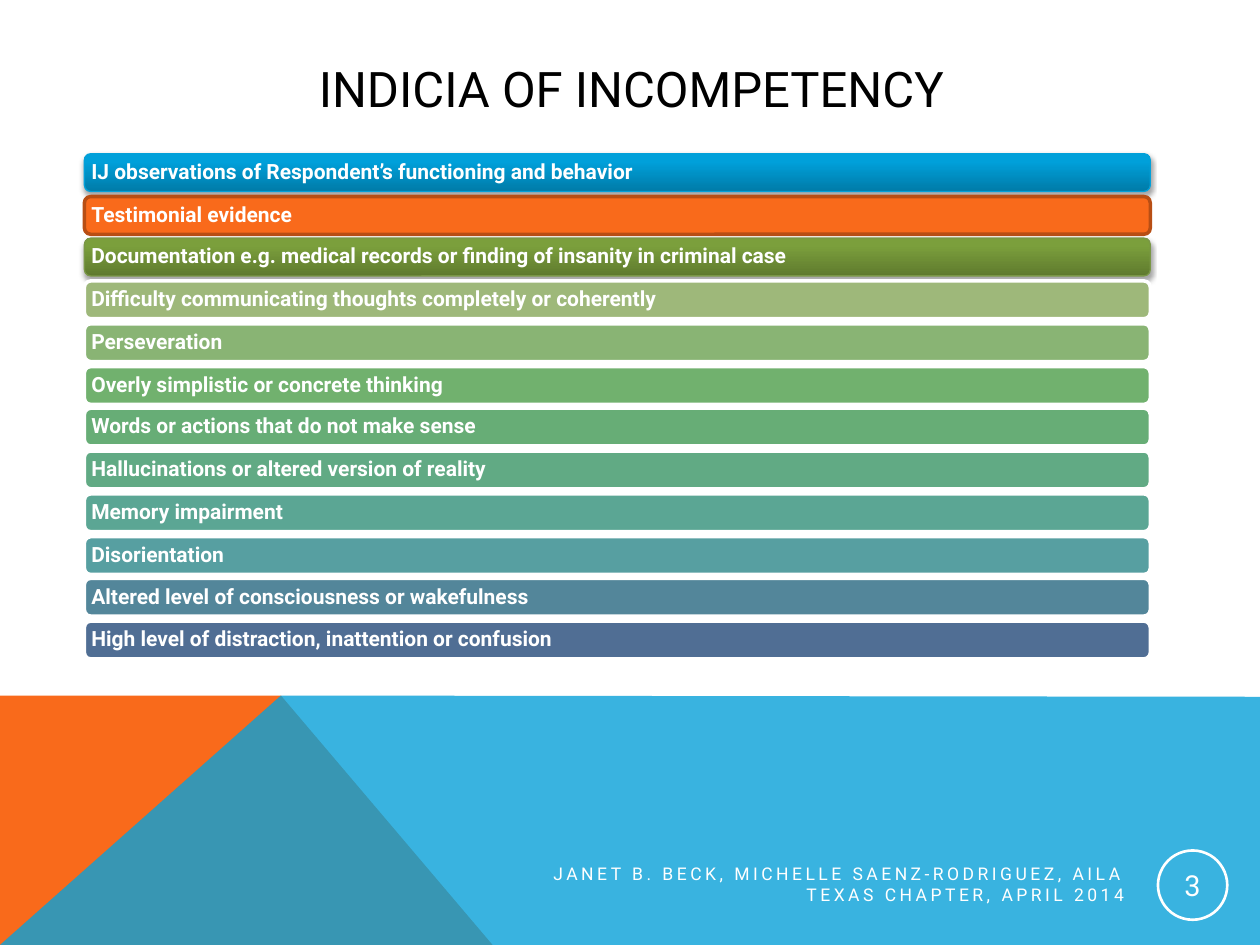
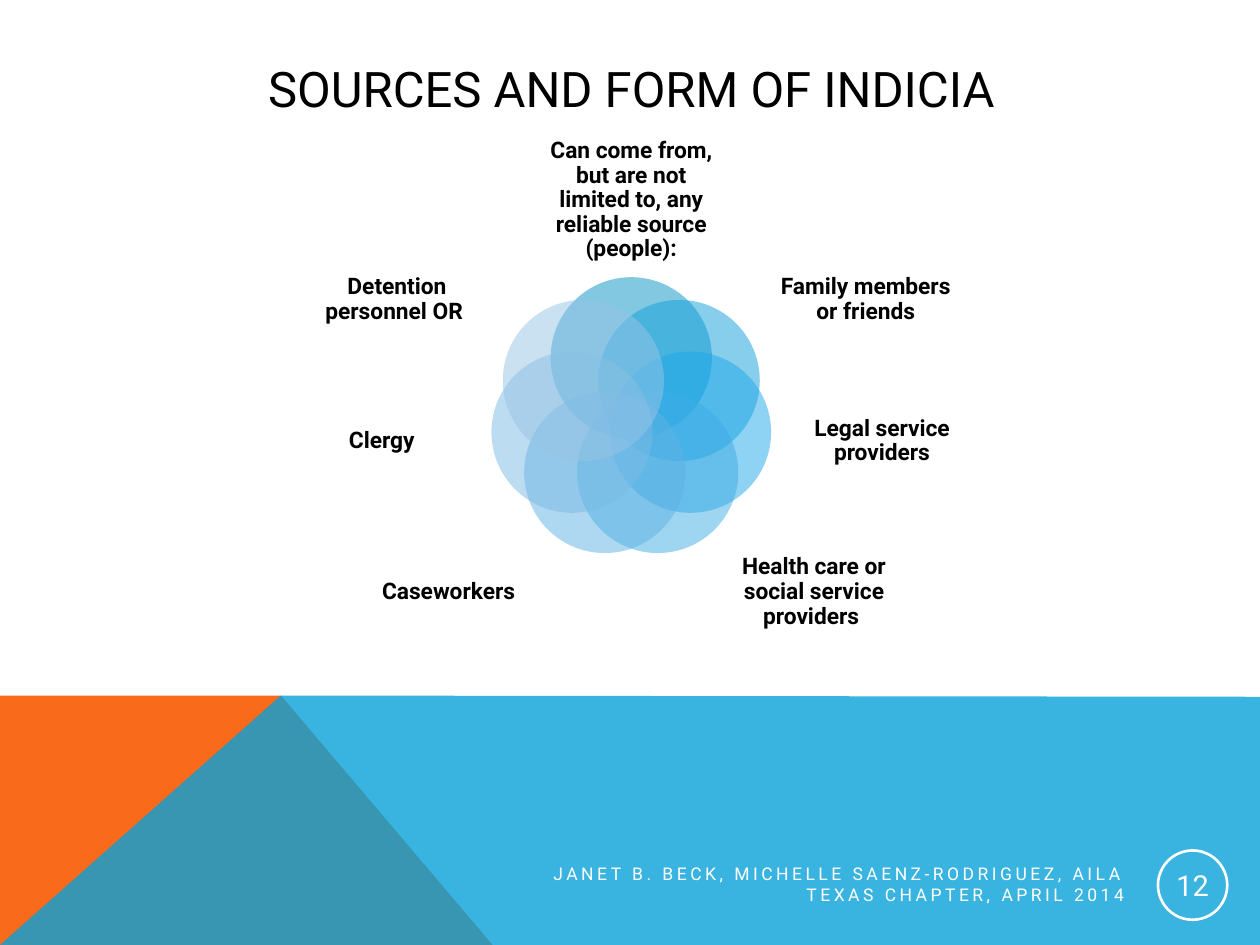
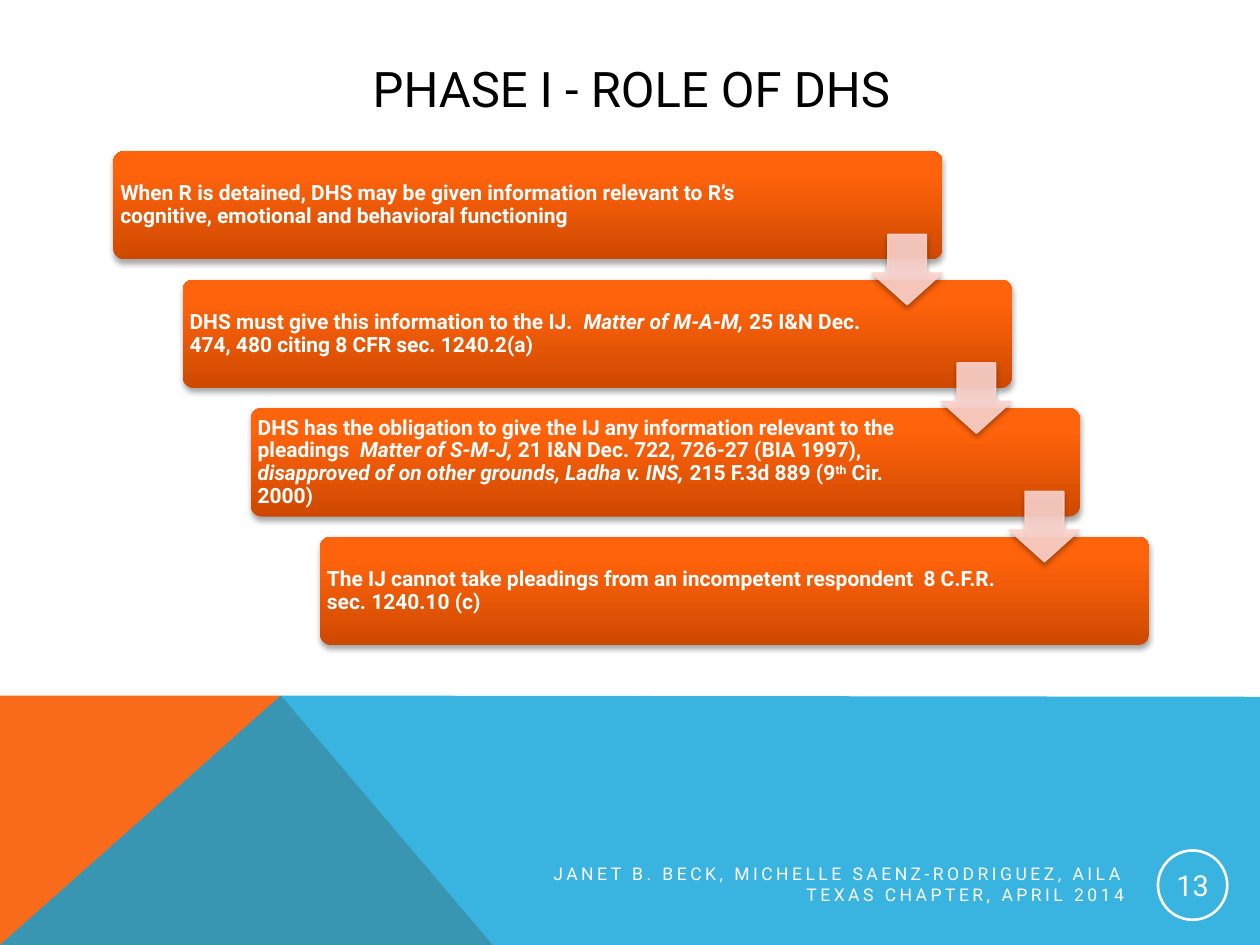
import math
from dataclasses import dataclass
from typing import NamedTuple

import lxml.etree
import pptx
import pptx.dml.color
import pptx.enum.shapes
import pptx.enum.text
import pptx.oxml.ns
import pptx.util

PX = 9144  # EMU per px, 100 px to the inch
FONT = "Roboto"
FOOTER = "JANET B. BECK, MICHELLE SAENZ-RODRIGUEZ, AILA TEXAS CHAPTER, APRIL 2014"

COLORS = {
    "text": "000000",
    "white": "FFFFFF",
    "orange": "F96A1B",
    "orange_edge": "B84E14",
    "band_blue": "08A1D9",
    "blue_edge": "03A0D9",
    "green_edge": "7A9746",
    "arrow": "FDD4CD",
}
# Gradient stops at 0, 80 and 100 percent, from bottom to top
GRADIENTS = {
    "blue": ("007BA8", "00A0DA", "00A0DB"),
    "green": ("5F7A2E", "7B9F3C", "7CA13B"),
    "orange": ("CE4900", "FF630C", "FF640E"),
}

SHAPE = pptx.enum.shapes.MSO_SHAPE
ALIGN = pptx.enum.text.PP_ALIGN
MIDDLE = pptx.enum.text.MSO_ANCHOR.MIDDLE
qn = pptx.oxml.ns.qn


class Box(NamedTuple):
    x: int
    y: int
    w: int
    h: int


class Run(NamedTuple):
    text: str
    italic: bool = False
    superscript: bool = False


class Label(NamedTuple):
    text: str
    box: Box
    circle_color: str


@dataclass(frozen=True)
class Style:
    fill: str | tuple[str, str, str] | None
    line: str | None = None
    line_pt: float = 0.75
    alpha: int = 100
    shadow: bool = False


@dataclass(frozen=True)
class TextStyle:
    size: float
    color: str = COLORS["white"]
    bold: bool = False
    align: ALIGN = ALIGN.LEFT
    line_spacing: float | None = None
    tracking_pt: int = 0


TITLE = TextStyle(28, COLORS["text"], align=ALIGN.CENTER)
PAGE_NUMBER = TextStyle(16.5, align=ALIGN.CENTER)
CREDIT = TextStyle(10, align=ALIGN.RIGHT, tracking_pt=2)
BAR_TEXT = TextStyle(12, bold=True, line_spacing=0.9)
LABEL_TEXT = TextStyle(13, COLORS["text"], True, ALIGN.CENTER, 0.9)


def plain_bar(color: str) -> Style:
    return Style(color, COLORS["white"], 2)


INDICIA = [
    ("IJ observations of Respondent’s functioning and behavior",
     Style(GRADIENTS["blue"], COLORS["blue_edge"], shadow=True)),
    ("Testimonial evidence", Style(COLORS["orange"], COLORS["orange_edge"], 2)),
    ("Documentation e.g. medical records or finding of insanity in criminal case",
     Style(GRADIENTS["green"], COLORS["green_edge"], shadow=True)),
    ("Difficulty communicating thoughts completely or coherently", plain_bar("9EB87A")),
    ("Perseveration", plain_bar("89B474")),
    ("Overly simplistic or concrete thinking", plain_bar("71B16E")),
    ("Words or actions that do not make sense", plain_bar("67AD76")),
    ("Hallucinations or altered version of reality", plain_bar("61AA84")),
    ("Memory impairment", plain_bar("5BA694")),
    ("Disorientation", plain_bar("579FA1")),
    ("Altered level of consciousness or wakefulness", plain_bar("53869A")),
    ("High level of distraction, inattention or confusion", plain_bar("506E94")),
]

# Clockwise from the top
SOURCES = [
    Label("Can come from, but are not limited to, any reliable source (people):",
          Box(428, 120, 146, 78), "0792C5"),
    Label("Family members or friends", Box(618, 195, 138, 86), "0F9FDB"),
    Label("Legal service providers", Box(632, 304, 136, 92), "1EA8E9"),
    Label("Health care or social service providers ", Box(573, 428, 146, 84), "3FACE5"),
    Label("Caseworkers", Box(283, 428, 146, 84), "5EB2E4"),
    Label("Clergy", Box(235, 304, 136, 92), "7BBAE4"),
    Label("Detention personnel OR ", Box(246, 195, 138, 86), "97C4E5"),
]

DHS_STEPS = [
    [Run("When R is detained, DHS may be given information relevant to R’s "
         "cognitive, emotional and behavioral functioning")],
    [Run("DHS must give this information to the IJ.  "),
     Run("Matter of M-A-M, ", italic=True),
     Run("25 I&N Dec. 474, 480 citing 8 CFR sec. 1240.2(a)")],
    [Run("DHS has the obligation to give the IJ any information relevant to the pleadings  "),
     Run("Matter of S-M-J, ", italic=True),
     Run("21 I&N Dec. 722, 726-27 (BIA 1997), "),
     Run("disapproved of on other grounds, Ladha v. INS, ", italic=True),
     Run("215 F.3d 889 (9"),
     Run("th", superscript=True),
     Run(" Cir. 2000)")],
    [Run("The IJ cannot take pleadings from an incompetent respondent  8 C.F.R.  "
         "sec. 1240.10 (c)")],
]


def rgb(color: str) -> pptx.dml.color.RGBColor:
    return pptx.dml.color.RGBColor.from_string(color)


def emu(box: Box) -> list[int]:
    return [v * PX for v in box]


def add_color(parent, color: str, alpha: int = 100) -> None:
    clr = lxml.etree.SubElement(parent, qn("a:srgbClr"), val=color)
    if alpha < 100:
        lxml.etree.SubElement(clr, qn("a:alpha"), val=str(alpha * 1000))


def apply_style(s, style: Style) -> None:
    s.shadow.inherit = False
    sp_pr = s.element.spPr
    if style.fill is None:
        s.fill.background()
    elif isinstance(style.fill, str):
        s.fill.solid()
        s.fill.fore_color.rgb = rgb(style.fill)
    else:
        s.fill.gradient()
        s.fill.gradient_angle = 90
        stops = sp_pr.find(".//" + qn("a:gsLst"))
        for old in list(stops):
            stops.remove(old)
        for pos, color in zip((0, 80, 100), style.fill):
            add_color(lxml.etree.SubElement(stops, qn("a:gs"), pos=str(pos * 1000)), color)
    if style.line:
        s.line.color.rgb = rgb(style.line)
        s.line.width = pptx.util.Pt(style.line_pt)
    else:
        s.line.fill.background()
    if style.alpha < 100:
        for clr in sp_pr.findall(".//" + qn("a:srgbClr")):
            lxml.etree.SubElement(clr, qn("a:alpha"), val=str(style.alpha * 1000))
    if style.shadow:
        shadow = lxml.etree.SubElement(
            sp_pr.find(qn("a:effectLst")), qn("a:outerShdw"),
            blurRad=str(pptx.util.Pt(3.1)), dist=str(pptx.util.Pt(1.8)),
            dir="5400000", rotWithShape="0")
        add_color(shadow, COLORS["text"], 35)


def write(s, runs: list[Run], style: TextStyle,
          insets: tuple[int, int, int, int] = (10, 5, 10, 5)) -> None:
    """Fill a shape with one paragraph; insets are left, top, right, bottom."""
    tf = s.text_frame
    tf.word_wrap = True
    tf.auto_size = pptx.enum.text.MSO_AUTO_SIZE.NONE
    tf.vertical_anchor = MIDDLE
    tf.margin_left, tf.margin_top, tf.margin_right, tf.margin_bottom = [v * PX for v in insets]
    p = tf.paragraphs[0]
    p.alignment = style.align
    if style.line_spacing:
        p.line_spacing = style.line_spacing
    for run in runs:
        r = p.add_run()
        r.text = run.text
        r.font.name = FONT
        r.font.size = pptx.util.Pt(style.size)
        r.font.bold = style.bold
        r.font.italic = run.italic
        r.font.color.rgb = rgb(style.color)
        r_pr = r._r.get_or_add_rPr()
        if run.superscript:
            r_pr.set("baseline", "30000")
        if style.tracking_pt:
            r_pr.set("spc", str(style.tracking_pt * 100))


def add_shape(slide, kind: SHAPE, box: Box, style: Style, adjustments: tuple[float, ...] = ()):
    s = slide.shapes.add_shape(kind, *emu(box))
    for i, value in enumerate(adjustments):
        s.adjustments[i] = value
    apply_style(s, style)
    return s


def add_bands_to_layout(layout, slide) -> None:
    """Build the bottom bands on a slide and move them to its layout."""
    bands = [
        ([(0, 750), (0, 552), (223, 552), (391, 750)], Style(COLORS["orange"])),
        ([(0, 750), (223, 552), (1000, 553), (1000, 750)], Style(COLORS["band_blue"], alpha=80)),
    ]
    for points, style in bands:
        builder = slide.shapes.build_freeform(*points[0], scale=PX)
        builder.add_line_segments(points[1:], close=True)
        s = builder.convert_to_shape()
        apply_style(s, style)
        layout.shapes.element.append(s.element)


def add_slide(prs, layout, title: str):
    slide = prs.slides.add_slide(layout)
    s = slide.shapes.title
    s.left, s.top, s.width, s.height = emu(Box(90, 40, 822, 60))
    write(s, [Run(title)], TITLE)
    return slide


def add_footer(slide, number: int) -> None:
    s = add_shape(slide, SHAPE.OVAL, Box(919, 675, 55, 55), Style(None, COLORS["white"], 1.5))
    write(s, [Run(str(number))], PAGE_NUMBER, (1, 1, 1, 1))
    s = slide.shapes.add_textbox(*emu(Box(385, 687, 517, 30)))
    write(s, [Run(FOOTER)], CREDIT)


def draw_indicia(slide) -> None:
    first_y, last_y = 122, 493
    pitch = (last_y - first_y) / (len(INDICIA) - 1)
    for i, (text, style) in enumerate(INDICIA):
        box = Box(67, first_y + round(i * pitch), 846, 30)
        s = add_shape(slide, SHAPE.ROUNDED_RECTANGLE, box, style)
        write(s, [Run(text)], BAR_TEXT, (4, 4, 4, 4))


def draw_sources(slide) -> None:
    ring_x, ring_y, ring_radius, diameter = 437, 268, 48, 128
    for i, label in enumerate(SOURCES):
        angle = 2 * math.pi * i / len(SOURCES)
        circle = Box(ring_x + round(ring_radius * math.sin(angle)),
                     ring_y - round(ring_radius * math.cos(angle)), diameter, diameter)
        add_shape(slide, SHAPE.OVAL, circle, Style(label.circle_color, alpha=50))
        s = slide.shapes.add_textbox(*emu(label.box))
        write(s, [Run(label.text)], LABEL_TEXT, (0, 0, 0, 0))


def draw_dhs_steps(slide) -> None:
    step_style = Style(GRADIENTS["orange"], shadow=True)
    arrow_style = Style(COLORS["arrow"], COLORS["arrow"], alpha=90, shadow=True)
    boxes = [Box(90 + round(i * 164 / 3), 120 + i * 102, 658, 86)
             for i in range(len(DHS_STEPS))]
    for i, (box, runs) in enumerate(zip(boxes, DHS_STEPS)):
        s = add_shape(slide, SHAPE.ROUNDED_RECTANGLE, box, step_style, (0.1,))
        text_width = 563 if i == 0 else 547
        write(s, runs, BAR_TEXT, (3, 3, box.w - text_width + 3, 3))
    for box in boxes[:-1]:
        add_shape(slide, SHAPE.DOWN_ARROW, Box(box.x + 602, box.y + 66, 56, 56),
                  arrow_style, (0.55, 0.45))


def main() -> None:
    prs = pptx.Presentation()
    prs.slide_width, prs.slide_height = 1000 * PX, 750 * PX
    layout = prs.slide_layouts[5]
    pages = [
        ("INDICIA OF INCOMPETENCY", 3, draw_indicia),
        ("SOURCES AND FORM OF INDICIA", 12, draw_sources),
        ("PHASE I - ROLE OF DHS", 13, draw_dhs_steps),
    ]
    for title, number, draw in pages:
        slide = add_slide(prs, layout, title)
        draw(slide)
        add_footer(slide, number)
    add_bands_to_layout(layout, prs.slides[0])
    prs.save("out.pptx")


if __name__ == "__main__":
    main()
